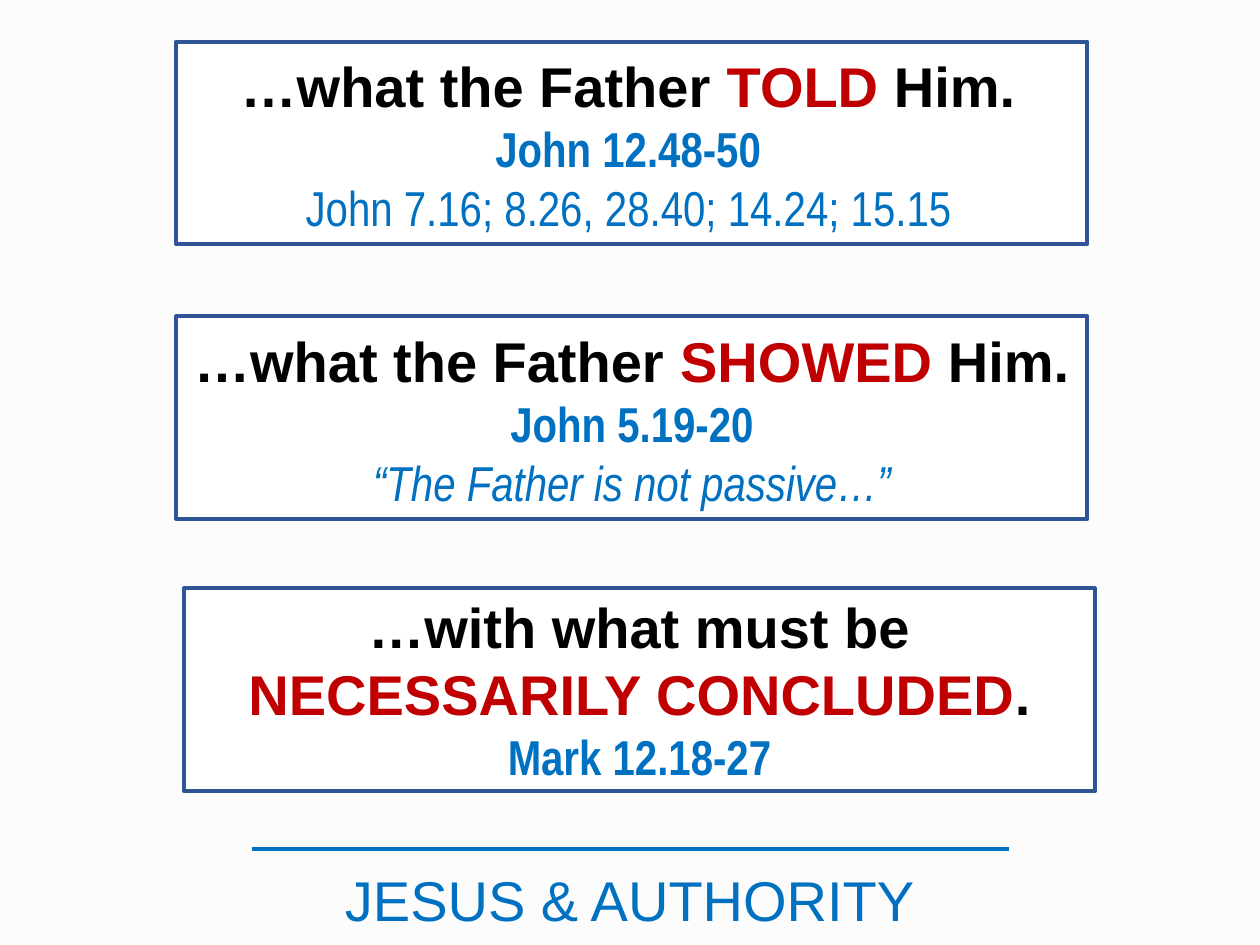
from lxml import etree
from pptx import Presentation
from pptx.dml.color import RGBColor
from pptx.enum import shapes, text
from pptx.oxml import ns
from pptx.util import Inches, Pt

BACKGROUND = RGBColor(0xFC, 0xFC, 0xFC)
WHITE = RGBColor(0xFF, 0xFF, 0xFF)
BLACK = RGBColor(0x00, 0x00, 0x00)
RED = RGBColor(0xC0, 0x00, 0x00)
BLUE = RGBColor(0x00, 0x70, 0xC0)
BORDER = RGBColor(0x2F, 0x55, 0x97)

BOX_WIDTH = Inches(7.23)
BOX_HEIGHT = Inches(1.61)


def format_paragraph(paragraph, size, name, bold=False, italic=False):
    paragraph.alignment = text.PP_ALIGN.CENTER
    paragraph.font.size = Pt(size)
    paragraph.font.name = name
    paragraph.font.bold = bold
    paragraph.font.italic = italic


presentation = Presentation()
presentation.slide_width = Inches(10)
presentation.slide_height = Inches(7.5)
slide = presentation.slides.add_slide(presentation.slide_layouts[5])
slide.background.fill.solid()
slide.background.fill.fore_color.rgb = BACKGROUND

title = slide.shapes.title
title.left, title.top = Inches(0), Inches(6.82)
title.width, title.height = Inches(10), Inches(0.64)
title.text_frame.text = "JESUS & AUTHORITY"
title.text_frame.vertical_anchor = text.MSO_ANCHOR.TOP
title.text_frame.auto_size = text.MSO_AUTO_SIZE.NONE
format_paragraph(title.text_frame.paragraphs[0], 32, "Arial")
title.text_frame.paragraphs[0].font.color.rgb = BLUE

rule = slide.shapes.add_connector(
    shapes.MSO_CONNECTOR.STRAIGHT, Inches(2), Inches(6.74), Inches(8.01), Inches(6.74)
)
rule.line.color.rgb = BLUE
rule.line.width = Pt(2.25)
etree.SubElement(rule.element.spPr, ns.qn("a:effectLst"))

statements = [
    (1.4, 0.33, 1.37, 0.36, 1.58,
     ("…what the Father ", "TOLD", " Him."),
     [("John 12.48-50", True, False),
      ("John 7.16; 8.26, 28.40; 14.24; 15.15", False, False)]),
    (1.4, 2.51, 1.4, 2.54, 1.58,
     ("…what the Father ", "SHOWED", " Him."),
     [("John 5.19-20", True, False),
      ("“The Father is not passive…”", False, True)]),
    (1.46, 4.67, 1.46, 4.65, 1.65,
     ("…with what must be ", "NECESSARILY CONCLUDED", "."),
     [("Mark 12.18-27", True, False)]),
]

for box_left, box_top, text_left, text_top, text_height, heading, references in statements:
    box = slide.shapes.add_shape(
        shapes.MSO_SHAPE.RECTANGLE, Inches(box_left), Inches(box_top), BOX_WIDTH, BOX_HEIGHT
    )
    box.shadow.inherit = False
    box.fill.solid()
    box.fill.fore_color.rgb = WHITE
    box.line.color.rgb = BORDER
    box.line.width = Pt(2.25)

    label = slide.shapes.add_textbox(
        Inches(text_left), Inches(text_top), BOX_WIDTH, Inches(text_height)
    )
    frame = label.text_frame
    frame.word_wrap = True
    paragraph = frame.paragraphs[0]
    format_paragraph(paragraph, 32, "Arial", bold=True)
    for words, color in zip(heading, (BLACK, RED, BLACK)):
        run = paragraph.add_run()
        run.text = words
        run.font.color.rgb = color

    for reference, bold, italic in references:
        paragraph = frame.add_paragraph()
        paragraph.text = reference
        format_paragraph(paragraph, 28, "Arial Narrow", bold, italic)
        paragraph.font.color.rgb = BLUE

presentation.save("out.pptx")
